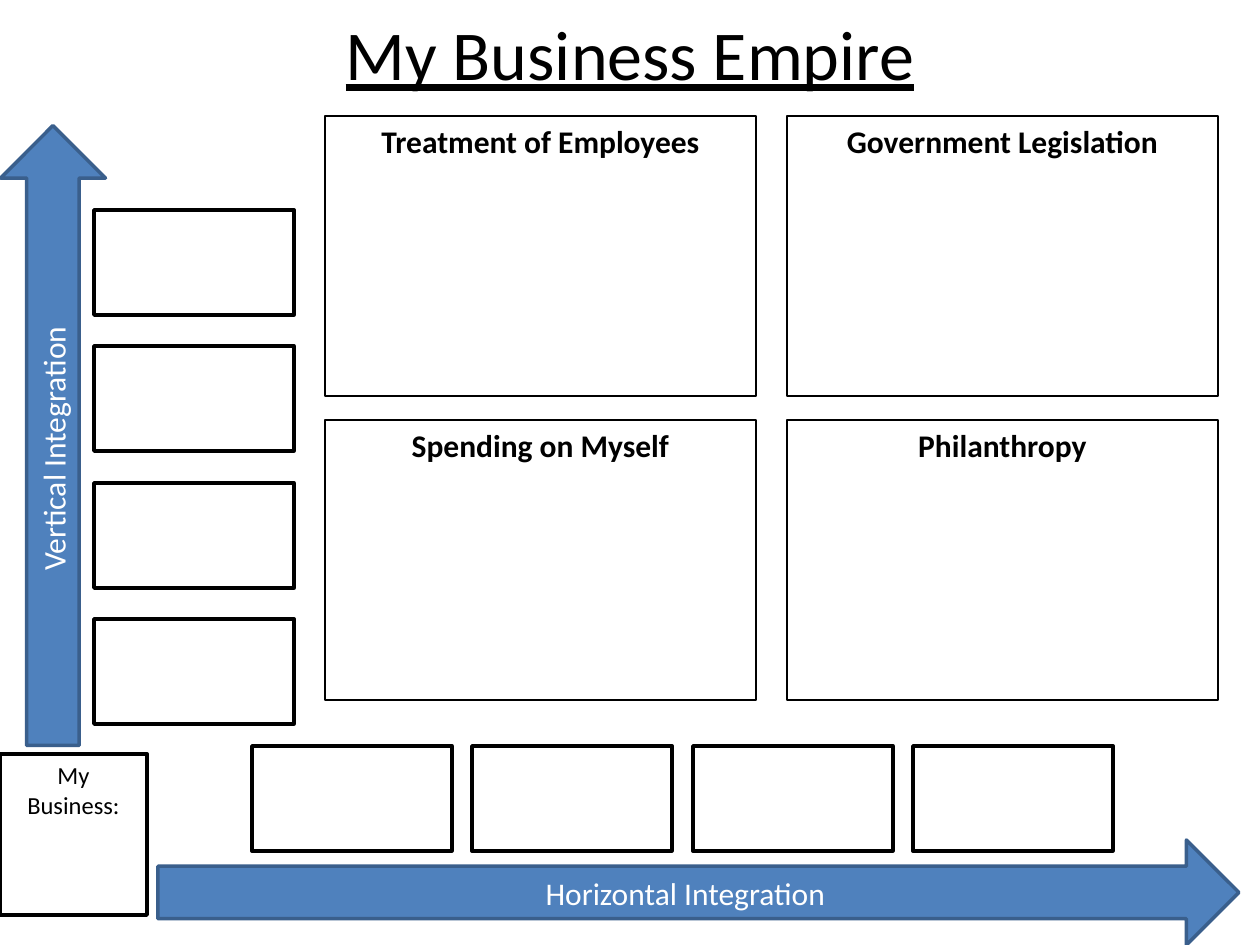
from pptx import Presentation
from pptx.dml.color import RGBColor as Rgb
from pptx.enum.shapes import MSO_SHAPE as Kind
from pptx.enum.text import MSO_ANCHOR as Anchor, PP_ALIGN as Align
from pptx.util import Inches, Pt

# Content
TITLE = "My Business Empire"
TOPICS = [
    ["Treatment of Employees", "Government Legislation"],
    ["Spending on Myself", "Philanthropy"],
]
# text, place in px, turn in degrees
ARROWS = [
    ("Vertical Integration", (-257, 383, 620, 105), 270),
    ("Horizontal Integration", (158, 840, 1081, 105), 0),
]
OWNER = "My Business:"
STEPS = 4  # empty boxes along each arrow

# Format
HEX = {"ink": "000000", "paper": "FFFFFF", "blue": "4F81BD", "edge": "3A5F8C"}
HEAD = {"size": Pt(40), "underline": True, "bold": False}
LABEL = {"size": Pt(18)}
TOPIC = {"size": Pt(18), "bold": True}
SMALL = {"size": Pt(14)}
SCALE = Inches(1) / 126


def emu(px):
    return round(px * SCALE)


def place(shape, box):
    for name, px in zip(("left", "top", "width", "height"), box):
        setattr(shape, name, emu(px))


def write(shape, text, form, ink="ink", anchor=Anchor.TOP):
    frame = shape.text_frame
    frame.word_wrap = True
    frame.vertical_anchor = anchor
    para = frame.paragraphs[0]
    para.alignment = Align.CENTER
    run = para.add_run()
    run.text = text
    for name, value in {"name": "Calibri", **form}.items():
        setattr(run.font, name, value)
    run.font.color.rgb = Rgb.from_string(HEX[ink])


def draw(kind, box, edge, width, fill=None):
    shape = slide.shapes.add_shape(kind, *map(emu, box))
    shape.shadow.inherit = False
    if fill:
        shape.fill.solid()
        shape.fill.fore_color.rgb = Rgb.from_string(HEX[fill])
    else:
        shape.fill.background()
    shape.line.color.rgb = Rgb.from_string(HEX[edge])
    shape.line.width = Pt(width)
    return shape


deck = Presentation()
deck.slide_width, deck.slide_height = Inches(10), Inches(7.5)
slide = deck.slides.add_slide(deck.slide_layouts[5])

# Title
title = slide.shapes.title
place(title, (0, 0, 1260, 105))
write(title, TITLE, HEAD, anchor=Anchor.MIDDLE)

# Integration arrows
for text, box, turn in ARROWS:
    arrow = draw(Kind.RIGHT_ARROW, box, "edge", 2, "blue")
    arrow.rotation = turn
    write(arrow, text, LABEL, "paper", Anchor.MIDDLE)

# Business at the corner
owner = draw(Kind.RECTANGLE, (0, 754, 147, 161), "ink", 2.25)
write(owner, OWNER, SMALL)

# Topic grid
for row, names in enumerate(TOPICS):
    for col, name in enumerate(names):
        box = (325 + 462 * col, 116 + 304 * row, 431, 280)
        write(draw(Kind.RECTANGLE, box, "ink", 0.75), name, TOPIC)

# Empty boxes up the side, then along the bottom
side = [(94, 210 + 273 * i // 2) for i in range(STEPS)]
foot = [(252 + 441 * i // 2, 746) for i in range(STEPS)]
for left, top in side + foot:
    draw(Kind.RECTANGLE, (left, top, 200, 105), "ink", 2)

deck.save("out.pptx")
